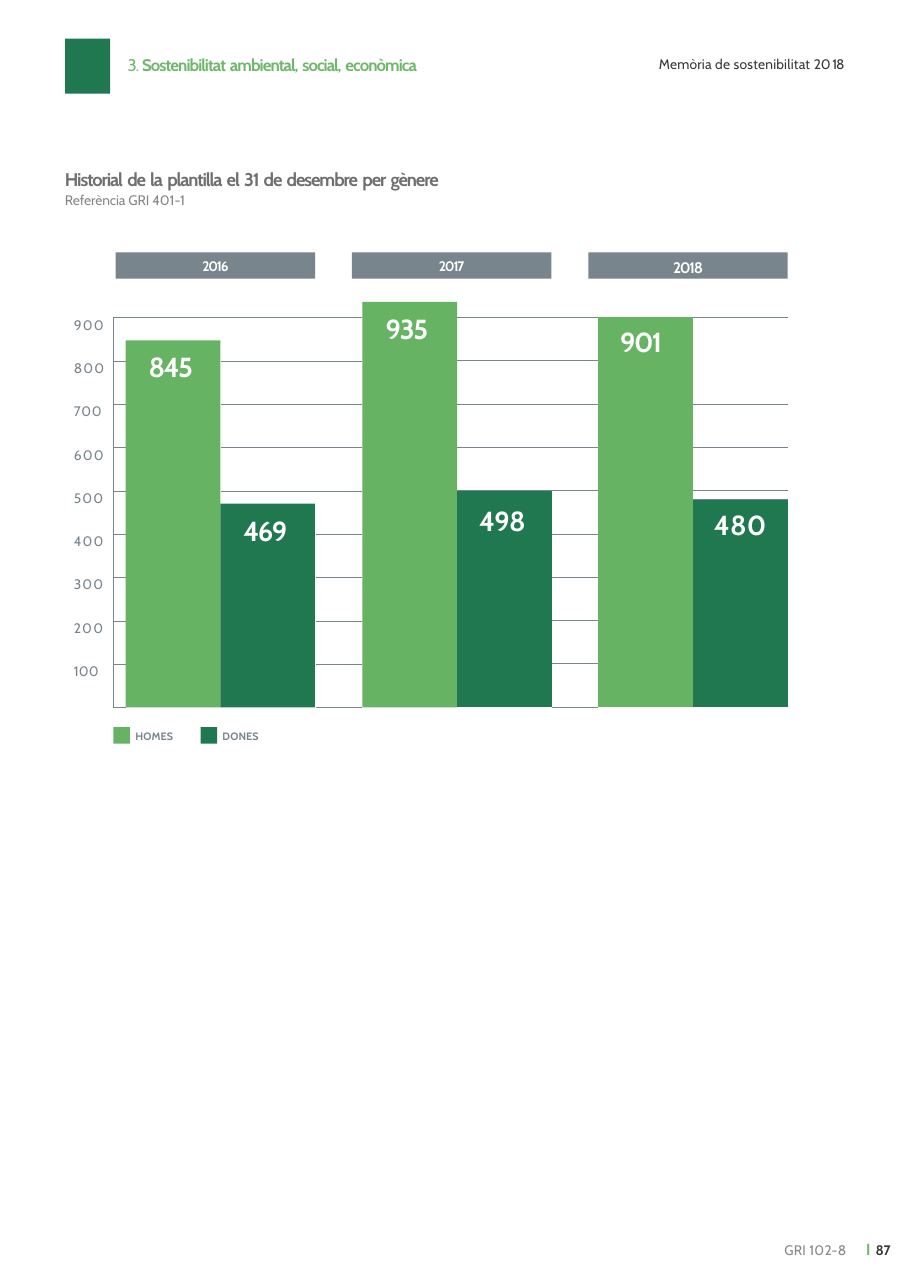
import pptx
import pptx.util
from pptx.dml.color import RGBColor
from pptx.enum.shapes import MSO_CONNECTOR, MSO_SHAPE
from pptx.enum.text import PP_ALIGN
from pptx.oxml import parse_xml
from pptx.oxml.ns import nsdecls, qn
from lxml import etree

Inches, Pt = pptx.util.Inches, pptx.util.Pt

LIGHT_GREEN = RGBColor(0x66, 0xB3, 0x64)
DARK_GREEN = RGBColor(0x20, 0x78, 0x50)
SECTION_GREEN = RGBColor(0x70, 0xB7, 0x6C)
SLATE = RGBColor(0x79, 0x85, 0x8D)
CHARCOAL = RGBColor(0x3A, 0x39, 0x38)
TITLE_GREY = RGBColor(0x70, 0x6F, 0x6F)
NOTE_GREY = RGBColor(0x87, 0x87, 0x87)
WHITE = RGBColor(0xFF, 0xFF, 0xFF)

FONT = "Cabin"
PLAIN_TABLE = "{2D5ABB26-0587-4C30-8999-92F81FD0307C}"
STEP = 0.393  # height of one hundred people
BAR, GAP = 0.86, 0.42


def add_span(para, text, size, color, bold=False, spacing=0.0):
    """Add a run; spacing is letter spacing in points."""
    span = para.add_run()
    span.text = text
    span.font.color.rgb = color
    for name, value in {"name": FONT, "size": Pt(size), "bold": bold}.items():
        setattr(span.font, name, value)
    span._r.get_or_add_rPr().set("spc", str(round(spacing * 100)))


def tight_words(text, size, color, bold, spacing):
    """Spans with tightened words and normal gaps between them."""
    spans = []
    for word in text.split():
        if spans:
            spans.append((" ", size, color, bold))
        spans.append((word, size, color, bold, spacing))
    return spans


def set_margins(holder, left=0.0, top=0.0):
    for name, value in {"left": left, "top": top, "right": 0, "bottom": 0}.items():
        setattr(holder, f"margin_{name}", Inches(value))


def add_text(page, left, top, width, height, *lines, inset=0.01):
    """Add a text box; each line is a list of spans."""
    box = page.shapes.add_textbox(*map(Inches, (left, top, width, height)))
    frame = box.text_frame
    frame.word_wrap = True
    set_margins(frame, 0.01, inset)
    for number, spans in enumerate(lines):
        para = frame.add_paragraph() if number else frame.paragraphs[0]
        para.space_before = Pt(1)
        for span in spans:
            add_span(para, *span)


def add_block(page, left, top, width, height, color):
    block = page.shapes.add_shape(MSO_SHAPE.RECTANGLE, *map(Inches, (left, top, width, height)))
    block.shadow.inherit = False
    block.fill.solid()
    block.fill.fore_color.rgb = color
    block.line.fill.background()
    return block


def add_label_block(page, box, color, spans, left=0.0, top=0.0, align=PP_ALIGN.LEFT):
    """Add a filled block with a text line set from its top."""
    frame = add_block(page, *box, color).text_frame
    frame.vertical_anchor = pptx.enum.text.MSO_ANCHOR.TOP
    set_margins(frame, left, top)
    frame.paragraphs[0].alignment = align
    add_span(frame.paragraphs[0], *spans)


def add_rule(page, x1, y1, x2, y2):
    rule = page.shapes.add_connector(MSO_CONNECTOR.STRAIGHT, *map(Inches, (x1, y1, x2, y2)))
    rule.line.color.rgb = SLATE
    rule.line.width = Pt(0.25)
    etree.SubElement(rule._element.spPr, qn("a:effectLst"))


def add_plain_table(page, left, top, widths, heights):
    """Add a table without style, margins or fills."""
    table = page.shapes.add_table(len(heights), len(widths), *map(
        Inches, (left, top, sum(widths), sum(heights)))).table
    table.first_row = table.horz_banding = False
    table._tbl.tblPr.find(qn("a:tableStyleId")).text = PLAIN_TABLE
    for column, width in zip(table.columns, widths):
        column.width = Inches(width)
    for row, height in zip(table.rows, heights):
        row.height = Inches(height)
    for cell in table.iter_cells():
        set_margins(cell)
        cell.fill.background()
        cell.text_frame.paragraphs[0]._p.get_or_add_endParaRPr().set("sz", "100")
    return table


def add_borders(cell, *sides):
    for place, side in enumerate(sides):
        cell._tc.get_or_add_tcPr().insert(place, parse_xml(
            f'<a:{side} {nsdecls("a")} w="3175"><a:solidFill>'
            f'<a:srgbClr val="{SLATE}"/></a:solidFill></a:{side}>'))


def add_header(page, left, top):
    # Plain block in place of the emblem
    add_block(page, left, top, 0.41, 0.5, DARK_GREEN)
    add_text(page, left + 0.56, top + 0.14, 3.2, 0.21, [
        ("3. ", 11, SECTION_GREEN, False, -0.7),
        *tight_words("Sostenibilitat ambiental, social, econòmica", 11, SECTION_GREEN, True, -0.62)])
    add_text(page, left + 5.38, top + 0.15, 1.9, 0.18, [
        ("Memòria de sostenibilitat ", 9, CHARCOAL, False, 0.13),
        ("2", 9, CHARCOAL, False, -0.2),
        ("0", 9, CHARCOAL, False, 1),
        ("18", 9, CHARCOAL, False, -0.7)])


def add_title(page, left, top):
    add_text(page, left, top, 4, 0.41,
             tight_words("Historial de la plantilla el 31 de desembre per gènere",
                         12, TITLE_GREY, True, -0.7),
             [("Referència GRI 401-1", 9, NOTE_GREY, False, -0.05)], inset=0.03)


def add_year_plates(page, left, top, pitch):
    for number, (year, size) in enumerate({"2016": 9, "2017": 9, "2018": 10}.items()):
        add_label_block(page, (left + number * pitch, top, 1.81, 0.24), SLATE,
                        (year, size, WHITE, True, -0.8), top=0.05, align=PP_ALIGN.CENTER)


def add_grid(page, left, base, right):
    """Draw the axis and the level lines that show beside the bars."""
    for level in range(10):
        y = base - level * STEP
        if level == 9:
            add_rule(page, left, y, right, y)
            continue
        start = right - GAP - (BAR if level > 4 else 0)
        add_rule(page, left, y, left + 0.11, y)
        add_rule(page, start, y, right, y)
        add_rule(page, left, y, left, y - STEP)


def add_scale(page, left, top):
    heights = [0.27] + [STEP] * 7 + [0.27]
    table = add_plain_table(page, left, top, [0.52], heights)
    spacings = {700: 0.5, 300: 0.7, 100: 0.1}
    for row, value in enumerate(range(900, 0, -100)):
        cell = table.cell(row, 0)
        set_margins(cell, 0.14, 0.12 if row else 0)
        add_span(cell.text_frame.paragraphs[0], str(value), 9, SLATE,
                 spacing=spacings.get(value, 0.8))


def add_first_bars(page, left, base):
    bars = [(0, 845, 3.33, LIGHT_GREEN, -1), (BAR, 469, 1.85, DARK_GREEN, -1),
            (2.15, 935, 3.68, LIGHT_GREEN, -0.8)]
    for offset, value, height, color, spacing in bars:
        add_label_block(page, (left + offset, base - height, BAR, height), color,
                        (str(value), 18, WHITE, True, spacing), 0.21, 0.09)


def add_bar_table(page, left, top):
    """Table whose merged cells are the last three bars."""
    heights = [STEP] * 4 + [0.08, STEP - 0.08] + [STEP] * 4
    table = add_plain_table(page, left, top, [BAR, GAP, BAR, BAR], heights)

    # Merged gaps
    for row in range(4):
        table.cell(row, 0).merge(table.cell(row, 1))
    for row, column in ((0, 3), (4, 1)):
        table.cell(row, column).merge(table.cell(row + 1, column))

    # Bars: first row, column, value, fill, margins, letter spacing
    bars = [(0, 2, 901, LIGHT_GREEN, 0.2, 0.08, -1.1), (4, 0, 498, DARK_GREEN, 0.2, 0.13, -0.5),
            (5, 3, 480, DARK_GREEN, 0.19, 0.09, 0.2)]
    for row, column, value, color, inset, drop, spacing in bars:
        cell = table.cell(row, column)
        cell.merge(table.cell(9, column))
        set_margins(cell, inset, drop)
        cell.fill.solid()
        cell.fill.fore_color.rgb = color
        add_span(cell.text_frame.paragraphs[0], str(value), 18, WHITE, True, spacing)

    # Level lines
    for row in range(4):
        add_borders(table.cell(row, 0), "lnT", "lnB")
    for row in (4, 6, 7, 8, 9):
        add_borders(table.cell(row, 1), "lnT", "lnB")
    for row in (0, 2, 3):
        add_borders(table.cell(row, 3), "lnT", "lnB")
    for column in (0, 3):
        add_borders(table.cell(4, column), "lnT")


def add_legend(page, left, top, pitch):
    for number, (name, color) in enumerate({"HOMES": LIGHT_GREEN, "DONES": DARK_GREEN}.items()):
        start = left + number * pitch
        add_block(page, start, top, 0.15, 0.15, color)
        add_text(page, start + 0.19, top + 0.01, 0.5, 0.14, [(name, 7, SLATE, True, 0.1)])


def add_footer(page, left, top):
    add_text(page, left, top + 0.08, 0.7, 0.17, [("GRI 102-8", 9, NOTE_GREY, False, 0.15)])
    add_text(page, left + 0.74, top, 0.4, 0.28, [
        ("ı ", 15, SECTION_GREEN, False, -0.1), ("87", 9, CHARCOAL, True, -0.2)])


def main():
    deck = pptx.Presentation()
    deck.slide_width, deck.slide_height = Inches(8.26), Inches(11.69)
    page = deck.slides.add_slide(deck.slide_layouts[6])
    add_header(page, 0.59, 0.35)
    add_title(page, 0.58, 1.5)
    add_grid(page, 1.03, 6.42, 3.29)
    add_scale(page, 0.53, 2.88)
    add_legend(page, 1.03, 6.6, 0.79)
    add_footer(page, 7.11, 11.18)
    add_first_bars(page, 1.14, 6.42)
    add_bar_table(page, 4.15, 2.88)
    add_year_plates(page, 1.05, 2.29, 2.145)
    deck.save("out.pptx")


if __name__ == "__main__":
    main()
